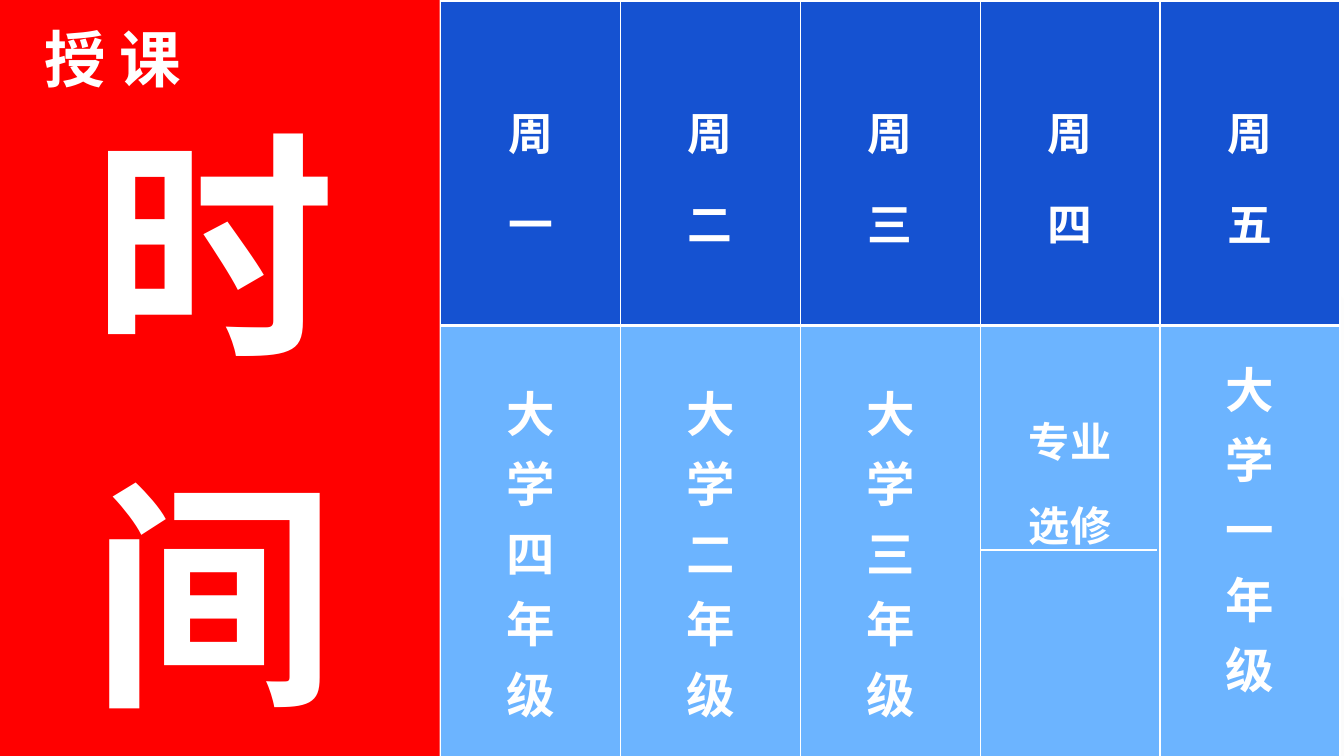
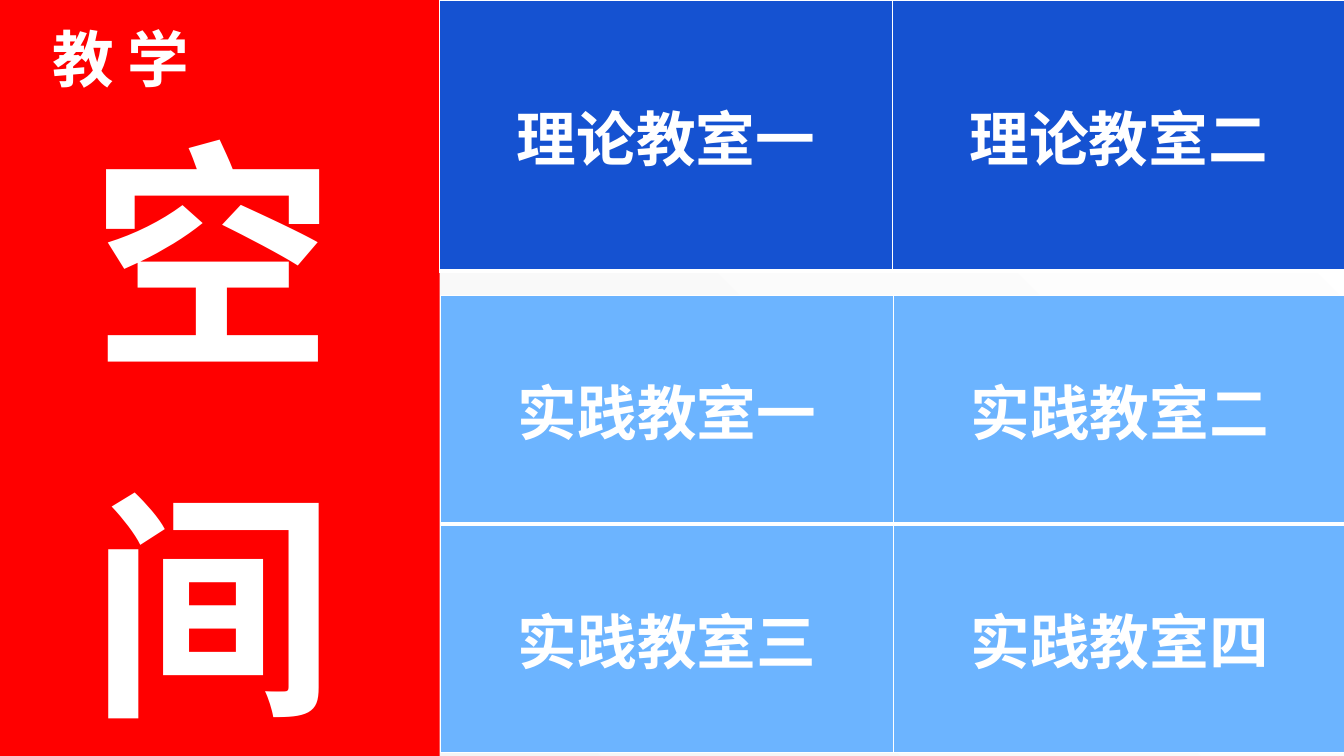
from dataclasses import dataclass
from lxml.etree import SubElement
from pptx import Presentation
from pptx.dml.color import RGBColor
from pptx.enum.shapes import MSO_CONNECTOR, MSO_SHAPE
from pptx.enum.text import MSO_ANCHOR, PP_ALIGN
from pptx.oxml.ns import qn
from pptx.util import Inches, Pt


@dataclass(frozen=True)
class Theme:
    font: str = "Noto Sans CJK SC"
    white: str = "FFFFFF"
    mist: str = "F2F2F2"
    red: str = "FF0000"
    dark_blue: str = "1552D1"
    light_blue: str = "6CB4FF"
    title: float = 44
    giant: float = 173.3
    room: float = 42.6
    grade: float = 34.6
    weekday: float = 32
    elective: float = 29.4
    thin: float = 1
    rule: float = 1.5
    thick: float = 3


THEME = Theme()
SLIDE_WIDTH, SLIDE_HEIGHT = 13.33, 7.5
BAND_WIDTH = 4.36
CELL_SIDE, CELL_EDGE = 0.13, 0.07


def color(code):
    return RGBColor.from_string(code)


def write(frame, lines, size, align=PP_ALIGN.LEFT, spacing=1.0):
    """Write each line as one paragraph in the shared bold white face."""
    frame.word_wrap = True
    for index, line in enumerate(lines):
        para = frame.add_paragraph() if index else frame.paragraphs[0]
        para.alignment = align
        para.line_spacing = spacing
        span = para.add_run()
        span.text = line
        span.font.size = Pt(size)
        span.font.bold = True
        span.font.name = THEME.font
        span.font.color.rgb = color(THEME.white)
        SubElement(span.font._element, qn("a:ea"), typeface=THEME.font)


def add_text(page, box, lines, **style):
    frame = page.shapes.add_textbox(*map(Inches, box)).text_frame
    frame.vertical_anchor = MSO_ANCHOR.MIDDLE
    write(frame, lines, **style)


def add_rule(page, start, end):
    rule = page.shapes.add_connector(
        MSO_CONNECTOR.STRAIGHT, *map(Inches, start + end))
    rule.line.color.rgb = color(THEME.white)
    rule.line.width = Pt(THEME.rule)
    SubElement(rule._element.spPr, qn("a:effectLst"))


def add_borders(cell, bottom):
    properties = cell._tc.get_or_add_tcPr()
    for side in ("L", "R", "T", "B"):
        width = bottom if side == "B" else THEME.thin
        line = SubElement(properties, qn(f"a:ln{side}"), w=str(Pt(width)))
        fill = SubElement(line, qn("a:solidFill"))
        SubElement(fill, qn("a:srgbClr"), val=THEME.white)


def fill_cell(cell, lines, fill, size, bottom=THEME.thin, spacing=1.0,
              anchor=MSO_ANCHOR.MIDDLE, above=CELL_EDGE, below=CELL_EDGE):
    add_borders(cell, bottom)
    cell.fill.solid()
    cell.fill.fore_color.rgb = color(fill)
    cell.margin_left = cell.margin_right = Inches(CELL_SIDE)
    cell.margin_top, cell.margin_bottom = Inches(above), Inches(below)
    cell.vertical_anchor = anchor
    write(cell.text_frame, lines, size, PP_ALIGN.CENTER, spacing)


def add_grid(page, box, heights, columns):
    """Add a plain table with equal columns and the given row heights."""
    left, top, width = box
    table = page.shapes.add_table(
        len(heights), columns, Inches(left), Inches(top),
        Inches(width), Inches(sum(heights))).table
    table.first_row = table.horz_banding = False
    for column in table.columns:
        column.width = Inches(width / columns)
    for row, height in zip(table.rows, heights):
        row.height = Inches(height)
    return table


def add_page(deck):
    """Add a slide with the soft gradient and the red band."""
    page = deck.slides.add_slide(deck.slide_layouts[6])
    backdrop = page.background.fill
    backdrop.gradient()
    backdrop.gradient_angle = 225
    for stop, code in zip(backdrop.gradient_stops, (THEME.white, THEME.mist)):
        stop.color.rgb = color(code)
    band = page.shapes.add_shape(
        MSO_SHAPE.RECTANGLE, 0, 0, Inches(BAND_WIDTH), Inches(SLIDE_HEIGHT))
    band.shadow.inherit = False
    band.fill.solid()
    band.fill.fore_color.rgb = color(THEME.red)
    band.line.fill.background()
    return page


def add_heading(page, title, title_left, giant, giant_left, giant_top):
    add_text(page, (title_left, 0.26, 1.71, 0.72), [title],
             size=THEME.title, spacing=0.9)
    add_text(page, (giant_left, giant_top, 2.62, 5.71), giant,
             size=THEME.giant, spacing=1.2)


def add_timetable(page, left, top, width):
    header, body = 3.22, 4.28
    days = "一二三四五"
    grades = ["大学四年级", "大学二年级", "大学三年级", None, "大学一年级"]
    table = add_grid(page, (left, top, width), (header, body), len(days))
    for index, (day, grade) in enumerate(zip(days, grades)):
        fill_cell(table.cell(0, index), ["周", day], THEME.dark_blue,
                  THEME.weekday, bottom=THEME.thick, spacing=1.4,
                  anchor=MSO_ANCHOR.TOP, above=0.71)
        cell = table.cell(1, index)
        if grade is None:
            fill_cell(cell, ["专业", "选修"], THEME.light_blue, THEME.elective,
                      spacing=1.4, anchor=MSO_ANCHOR.TOP, above=0.6)
        elif day == days[-1]:
            fill_cell(cell, grade, THEME.light_blue, THEME.grade,
                      anchor=MSO_ANCHOR.BOTTOM, below=0.54)
        else:
            fill_cell(cell, grade, THEME.light_blue, THEME.grade, above=0.28)
    # Rule under the elective course
    rule_left, rule_top = left + 3 * width / len(days), top + 5.45
    add_rule(page, (rule_left, rule_top), (rule_left + 1.75, rule_top))


def add_rooms(page, box, height, rows, fill):
    table = add_grid(page, box, [height] * len(rows), len(rows[0]))
    for row_index, names in enumerate(rows):
        bottom = THEME.thin if row_index else THEME.thick
        for column_index, name in enumerate(names):
            fill_cell(table.cell(row_index, column_index), [name], fill,
                      THEME.room, bottom=bottom)


def build_time_page(deck):
    page = add_page(deck)
    add_timetable(page, 4.37, 0.01, 8.92)
    add_heading(page, "授 课", 0.34, "时间", 0.82, 0.98)


def build_space_page(deck):
    page = add_page(deck)
    # Practice rooms below, theory rooms above
    add_rooms(page, (4.37, 2.93, 8.98), 2.27,
              [["实践教室一", "实践教室二"], ["实践教室三", "实践教室四"]],
              THEME.light_blue)
    add_rooms(page, (4.36, 0, 8.98), 2.69,
              [["理论教室一", "理论教室二"]], THEME.dark_blue)
    add_heading(page, "教 学", 0.42, "空间", 0.81, 1.08)


def main():
    deck = Presentation()
    deck.slide_width = Inches(SLIDE_WIDTH)
    deck.slide_height = Inches(SLIDE_HEIGHT)
    build_time_page(deck)
    build_space_page(deck)
    deck.save("out.pptx")


if __name__ == "__main__":
    main()
